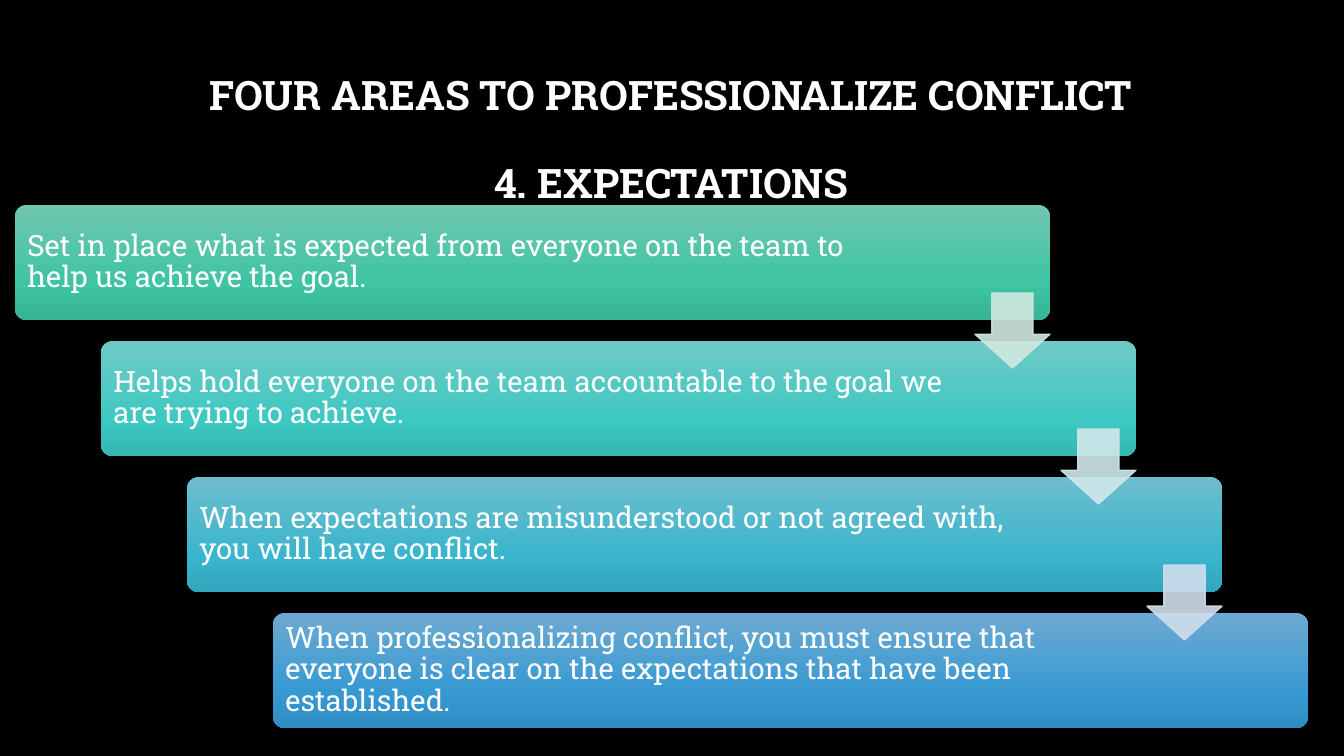
import pptx
import pptx.util
import pptx.dml.color
import pptx.enum.shapes
import pptx.enum.text
import pptx.oxml
import pptx.oxml.ns
import lxml.etree

PX = 9071  # EMU in one px, at 100.8 px to the inch
FONT = "Roboto Slab"
COLORS = {
    "background": "000000",
    "text": "FFFFFF",
    "bars": [
        ("70C6AF", "3EC4A3", "37B395"),
        ("6FCAC6", "3DC8C2", "34B8B3"),
        ("6EBDCE", "3AB5CD", "32A6BD"),
        ("6DAAD2", "3799D2", "2F8CC2"),
    ],
    "arrows": ["D0E8E0", "D0E8EA", "D0DEEC"],
}
TITLE = ["FOUR AREAS TO PROFESSIONALIZE CONFLICT", "4. EXPECTATIONS"]
EXPECTATIONS = [
    "Set in place what is expected from everyone on the team to help us achieve the goal.",
    "Helps hold everyone on the team accountable to the goal we are trying to achieve.",
    "When expectations are misunderstood or not agreed with, you will have conflict.",
    "When professionalizing conflict, you must ensure that everyone is clear on the "
    "expectations that have been established.",
]
SHAPES = pptx.enum.shapes.MSO_SHAPE


def rgb(color):
    return pptx.dml.color.RGBColor.from_string(color)


def px(*lengths):
    return [pptx.util.Emu(length * PX) for length in lengths]


def add_text(para, text, size, bold=False):
    para.line_spacing = 0.9
    span = para.add_run()
    span.text = text
    span.font.name = FONT
    span.font.size = pptx.util.Pt(size)
    span.font.bold = bold
    span.font.color.rgb = rgb(COLORS["text"])


def set_frame(frame, left, top, right, bottom):
    """Wrap the text, centre it vertically and set its margins in px."""
    frame.word_wrap = True
    frame.vertical_anchor = pptx.enum.text.MSO_ANCHOR.MIDDLE
    frame.margin_left, frame.margin_top, frame.margin_right, frame.margin_bottom = px(
        left, top, right, bottom)


def set_gradient(shape, colors):
    """Fill from top to bottom with three colour stops."""
    stops = "".join(
        f'<a:gs pos="{position}"><a:srgbClr val="{color}"/></a:gs>'
        for position, color in zip((0, 69000, 100000), colors))
    shape.fill.gradient()
    shape.fill.gradient_angle = 270
    old = shape.element.spPr.find(pptx.oxml.ns.qn("a:gradFill"))
    new = pptx.oxml.parse_xml(
        f'<a:gradFill {pptx.oxml.ns.nsdecls("a")} rotWithShape="1">'
        f'<a:gsLst>{stops}</a:gsLst><a:lin ang="5400000" scaled="0"/></a:gradFill>')
    old.getparent().replace(old, new)


def set_opacity(shape, percent):
    for color in shape.element.spPr.iter(pptx.oxml.ns.qn("a:srgbClr")):
        alpha = lxml.etree.SubElement(color, pptx.oxml.ns.qn("a:alpha"))
        alpha.set("val", str(percent * 1000))


def add_title(page, left, top, width, height):
    frame = page.shapes.add_textbox(*px(left, top, width, height)).text_frame
    set_frame(frame, 9, 5, 9, 5)
    for index, line in enumerate(TITLE):
        para = frame.paragraphs[0] if index == 0 else frame.add_paragraph()
        para.alignment = pptx.enum.text.PP_ALIGN.CENTER
        if index:
            para.space_before = pptx.util.Pt(31.5)
        add_text(para, line, 29, bold=True)


def add_bar(page, left, top, width, height, text, colors, right_margin):
    bar = page.shapes.add_shape(SHAPES.ROUNDED_RECTANGLE, *px(left, top, width, height))
    bar.adjustments[0] = 0.1
    bar.shadow.inherit = False
    bar.line.fill.background()
    set_gradient(bar, colors)
    set_frame(bar.text_frame, 9, 5, right_margin, 5)
    para = bar.text_frame.paragraphs[0]
    para.alignment = pptx.enum.text.PP_ALIGN.LEFT
    add_text(para, text, 21)


def add_arrow(page, left, top, size, color):
    arrow = page.shapes.add_shape(SHAPES.DOWN_ARROW, *px(left, top, size, size))
    arrow.adjustments[0], arrow.adjustments[1] = 0.55, 0.45
    arrow.shadow.inherit = False
    arrow.fill.solid()
    arrow.fill.fore_color.rgb = rgb(color)
    arrow.line.color.rgb = rgb(color)
    arrow.line.width = pptx.util.Pt(1)
    set_opacity(arrow, 90)


def add_cascade(page, left, top, width, height):
    """Four bars stepping down to the right, with an arrow between neighbours."""
    bar_width, bar_height, arrow_size = 1035, 115, 75
    steps = len(EXPECTATIONS) - 1
    step_x = (width - bar_width) // steps
    step_y = (height - bar_height) // steps
    for index, text in enumerate(EXPECTATIONS):
        add_bar(page, left + index * step_x, top + index * step_y, bar_width, bar_height,
                text, COLORS["bars"][index], 171 if index else 137)
    for index, color in enumerate(COLORS["arrows"]):
        add_arrow(page, left + index * step_x + bar_width - arrow_size,
                  top + index * step_y + 88, arrow_size, color)


def main():
    deck = pptx.Presentation()
    deck.slide_width, deck.slide_height = px(1344, 756)
    page = deck.slides.add_slide(deck.slide_layouts[6])
    page.background.fill.solid()
    page.background.fill.fore_color.rgb = rgb(COLORS["background"])
    add_title(page, 101, 68, 1141, 146)
    add_cascade(page, 15, 205, 1293, 523)
    deck.save("out.pptx")


if __name__ == "__main__":
    main()
